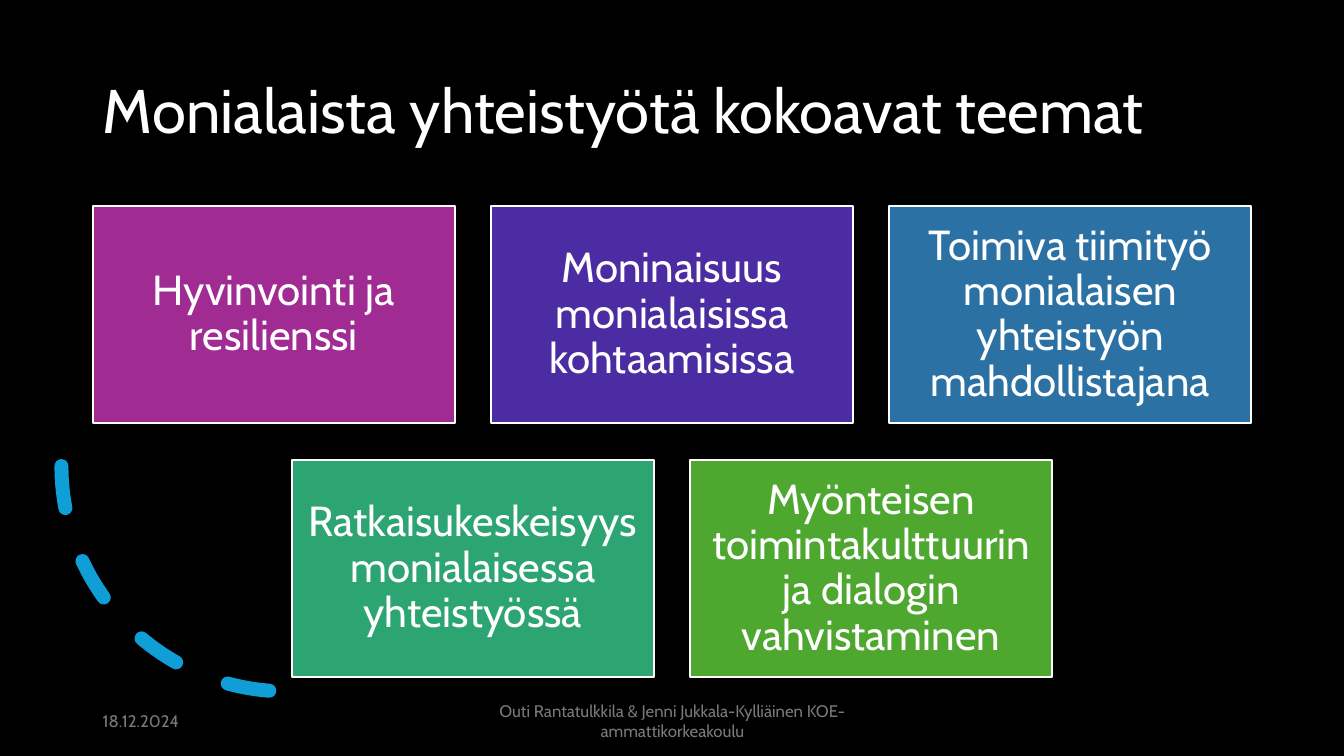
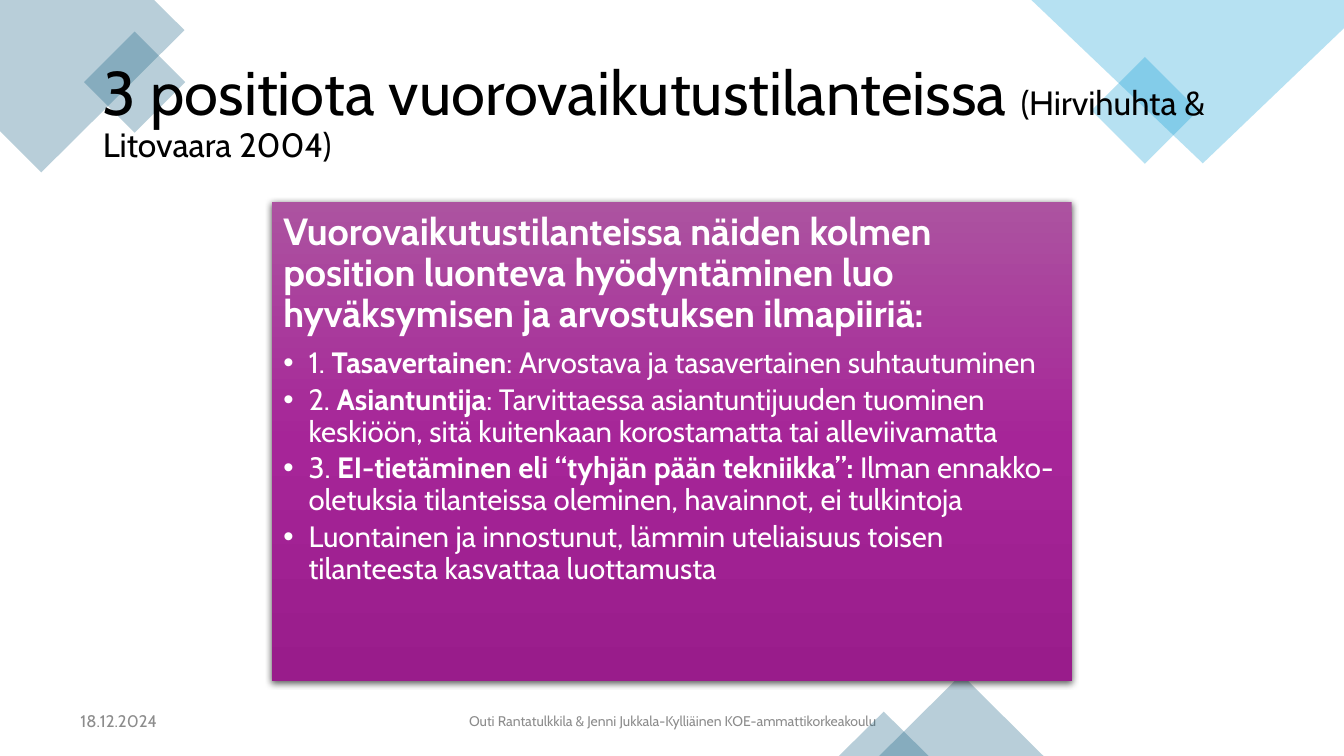
from dataclasses import dataclass

from lxml import etree
from pptx import Presentation
from pptx.dml.color import RGBColor
from pptx.enum.dml import MSO_LINE
from pptx.enum.shapes import MSO_SHAPE
from pptx.enum.text import MSO_ANCHOR, MSO_AUTO_SIZE, PP_ALIGN
from pptx.oxml import parse_xml
from pptx.oxml.ns import nsdecls, qn
from pptx.util import Inches, Pt

RECT, ARC, TRIANGLE = MSO_SHAPE.RECTANGLE, MSO_SHAPE.ARC, MSO_SHAPE.ISOSCELES_TRIANGLE
TOP, MIDDLE = MSO_ANCHOR.TOP, MSO_ANCHOR.MIDDLE
LEFT, CENTER = PP_ALIGN.LEFT, PP_ALIGN.CENTER
NO_FIT, DASH = MSO_AUTO_SIZE.NONE, MSO_LINE.DASH
TITLE_AND_CONTENT, TITLE_ONLY = 1, 5


@dataclass(frozen=True)
class Theme:
    font: str = "Cabin"
    black: str = "000000"
    white: str = "FFFFFF"
    teal: str = "156082"
    sky: str = "0F9ED5"
    footer_on_dark: str = "797979"
    footer_on_light: str = "8C8C8C"
    boxes: tuple = ("A02B93", "4B2CA2", "2C71A4", "2DA573", "4EA72E")
    panel: tuple = ((0, "AC53A0"), (50, "A62598"), (100, "991C8B"))
    title: int = 44
    citation: int = 24
    box: int = 30
    lead: int = 27
    bullet: int = 21
    footer: int = 12
    footer_small: int = 10


T = Theme()
WIDTH, HEIGHT = 13.33, 7.5
BOX_W, BOX_H, BOX_GAP, BOX_TOP = 3.59, 2.16, 0.36, 2.04
DATE = "18.12.2024"
AUTHORS = "Outi Rantatulkkila & Jenni Jukkala-Kylliäinen KOE-ammattikorkeakoulu"

THEME_ROWS = (
    ("Hyvinvointi ja resilienssi",
     "Moninaisuus monialaisissa kohtaamisissa",
     "Toimiva tiimityö monialaisen yhteistyön mahdollistajana"),
    ("Ratkaisukeskeisyys monialaisessa yhteistyössä",
     "Myönteisen toimintakulttuurin ja dialogin vahvistaminen"),
)
LEAD = ("Vuorovaikutustilanteissa näiden kolmen position luonteva hyödyntäminen "
        "luo hyväksymisen ja arvostuksen ilmapiiriä:")
# Each bullet: plain start, bold term, plain rest
POSITIONS = (
    ("1. ", "Tasavertainen", ": Arvostava ja tasavertainen suhtautuminen"),
    ("2. ", "Asiantuntija", ": Tarvittaessa asiantuntijuuden tuominen keskiöön, "
     "sitä kuitenkaan korostamatta tai alleviivamatta"),
    ("3. ", "EI-tietäminen eli “tyhjän pään tekniikka”: ",
     "Ilman ennakko-oletuksia tilanteissa oleminen, havainnot, ei tulkintoja"),
    ("Luontainen ja innostunut, lämmin uteliaisuus toisen tilanteesta "
     "kasvattaa luottamusta",),
)


# Text helpers
def add_run(p, text, size, color, bold=False):
    r = p.add_run()
    r.text = text
    r.font.name = T.font
    r.font.size = Pt(size)
    r.font.bold = bold
    r.font.color.rgb = RGBColor.from_string(color)


def setup_frame(sp, anchor=MIDDLE, inset=None):
    tf = sp.text_frame
    tf.word_wrap = True
    tf.auto_size = NO_FIT
    tf.vertical_anchor = anchor
    if inset is not None:
        tf.margin_left = tf.margin_right = Inches(inset)
        tf.margin_top = tf.margin_bottom = Inches(inset)
    return tf


def setup_paragraph(p, align=LEFT, spacing=0.9, after=0):
    p.alignment = align
    p.line_spacing = spacing
    p.space_before = Pt(0)
    p.space_after = Pt(after)
    return p


def set_bullet(p, char=None):
    pPr = p._p.get_or_add_pPr()
    indent = Inches(0.25) if char else 0
    pPr.set("marL", str(indent))
    pPr.set("indent", str(-indent))
    if char:
        etree.SubElement(pPr, qn("a:buChar")).set("char", char)
    else:
        etree.SubElement(pPr, qn("a:buNone"))


# Shape helpers
def place(sp, left, top, width, height):
    sp.left, sp.top = Inches(left), Inches(top)
    sp.width, sp.height = Inches(width), Inches(height)


def fill_plain(sp, color, opacity=100):
    sp.shadow.inherit = False
    sp.line.fill.background()
    sp.fill.solid()
    sp.fill.fore_color.rgb = RGBColor.from_string(color)
    if opacity < 100:
        rgb = sp._element.spPr.find(".//" + qn("a:srgbClr"))
        etree.SubElement(rgb, qn("a:alpha")).set("val", str(opacity * 1000))


def add_shape(s, kind, at, color, opacity=100, rotation=0):
    sp = s.shapes.add_shape(kind, *map(Inches, at))
    sp.rotation = rotation
    fill_plain(sp, color, opacity)
    return sp


def add_polygon(s, points, color, opacity):
    pts = [(Inches(x), Inches(y)) for x, y in points]
    builder = s.shapes.build_freeform(*pts[0])
    builder.add_line_segments(pts[1:], close=True)
    fill_plain(builder.convert_to_shape(), color, opacity)


def add_title(s, *parts, color):
    sp = s.shapes.title
    place(sp, 0.92, 0.4, 11.5, 1.45)
    p = setup_paragraph(setup_frame(sp).paragraphs[0])
    for text, size in parts:
        add_run(p, text, size, color)
    s.shapes._spTree.append(sp._element)  # above the decoration


def add_footer(s, date_left, authors_size, color):
    for text, left, width, size, align in (
            (DATE, date_left, 3, T.footer, LEFT),
            (AUTHORS, 4.42, 4.5, authors_size, CENTER)):
        sp = s.shapes.add_textbox(*map(Inches, (left, 6.95, width, 0.4)))
        p = setup_paragraph(setup_frame(sp).paragraphs[0], align, 1.0)
        add_run(p, text, size, color)


def add_dashed_arc(s):
    sp = s.shapes.add_shape(ARC, *map(Inches, (0.61, 2.39, 4.47, 4.47)))
    sp.shadow.inherit = False
    sp.fill.background()
    sp.rotation = 90
    sp._element.spPr.find(qn("a:xfrm")).set("flipV", "1")
    sp.line.color.rgb = RGBColor.from_string(T.sky)
    sp.line.width = Pt(10)
    sp.line.dash_style = DASH
    sp.line._get_or_add_ln().set("cap", "rnd")


def add_theme_box(s, left, top, text, color):
    sp = add_shape(s, RECT, (left, top, BOX_W, BOX_H), color)
    sp.line.color.rgb = RGBColor.from_string(T.white)
    sp.line.width = Pt(1.5)
    p = setup_paragraph(setup_frame(sp, inset=0.12).paragraphs[0], CENTER)
    add_run(p, text, T.box, T.white)


def fill_panel(sp):
    stops = "".join(
        f'<a:gs pos="{pos * 1000}"><a:srgbClr val="{color}"/></a:gs>'
        for pos, color in T.panel)
    spPr = sp._element.spPr
    spPr.append(parse_xml(
        f'<a:gradFill {nsdecls("a")} rotWithShape="1"><a:gsLst>{stops}</a:gsLst>'
        '<a:lin ang="5400000" scaled="0"/></a:gradFill>'))
    spPr.append(parse_xml(
        f'<a:effectLst {nsdecls("a")}><a:outerShdw blurRad="{Pt(4.5)}" '
        f'dist="{Pt(1.5)}" dir="5400000" algn="ctr" rotWithShape="0">'
        f'<a:srgbClr val="{T.black}"><a:alpha val="63000"/></a:srgbClr>'
        '</a:outerShdw></a:effectLst>'))


# Slides
def build_themes(prs):
    s = prs.slides.add_slide(prs.slide_layouts[TITLE_ONLY])
    s.background.fill.solid()
    s.background.fill.fore_color.rgb = RGBColor.from_string(T.black)
    add_title(s, ("Monialaista yhteistyötä kokoavat teemat", T.title), color=T.white)
    add_dashed_arc(s)
    colors = iter(T.boxes)
    for row, texts in enumerate(THEME_ROWS):
        row_width = len(texts) * (BOX_W + BOX_GAP) - BOX_GAP
        for col, text in enumerate(texts):
            left = (WIDTH - row_width) / 2 + col * (BOX_W + BOX_GAP)
            top = BOX_TOP + row * (BOX_H + BOX_GAP)
            add_theme_box(s, left, top, text, next(colors))
    add_footer(s, 0.92, T.footer, T.footer_on_dark)


def add_corner_decoration(s):
    add_polygon(s, ((0, 0), (1.53, 0), (1.83, 0.3), (0.41, 1.71), (0, 1.3)), T.teal, 30)
    add_polygon(s, ((10.23, 0), (WIDTH, 0), (WIDTH, 0.28), (11.93, 1.62)), T.sky, 30)
    for kind, at, color, rotation in (
            (RECT, (0.98, 0.46, 0.71, 0.71), T.teal, 45),
            (RECT, (10.98, 0.72, 0.75, 0.75), T.sky, 45),
            (TRIANGLE, (8.72, 6.69, 1.63, 0.81), T.teal, 0),
            (TRIANGLE, (8.32, 7.06, 0.89, 0.44), T.teal, 0)):
        add_shape(s, kind, at, color, 30, rotation)


def add_positions_panel(s):
    sp = s.placeholders[1]
    place(sp, 2.7, 2, 7.93, 4.76)
    fill_panel(sp)
    tf = setup_frame(sp, TOP, 0.11)
    p = setup_paragraph(tf.paragraphs[0], after=9.5)
    set_bullet(p)
    add_run(p, LEAD, T.lead, T.white, bold=True)
    for parts in POSITIONS:
        p = setup_paragraph(tf.add_paragraph(), after=3.5)
        p.level = 1
        set_bullet(p, "•")
        for i, text in enumerate(parts):
            add_run(p, text, T.bullet, T.white, bold=i == 1)
    s.shapes._spTree.append(sp._element)  # above the decoration


def build_positions(prs):
    s = prs.slides.add_slide(prs.slide_layouts[TITLE_AND_CONTENT])
    add_footer(s, 0.7, T.footer_small, T.footer_on_light)
    add_corner_decoration(s)
    add_title(s, ("3 positiota vuorovaikutustilanteissa ", T.title),
              ("(Hirvihuhta & Litovaara 2004)", T.citation), color=T.black)
    add_positions_panel(s)


def main():
    prs = Presentation()
    prs.slide_width, prs.slide_height = Inches(WIDTH), Inches(HEIGHT)
    build_themes(prs)
    build_positions(prs)
    prs.save("out.pptx")


if __name__ == "__main__":
    main()
